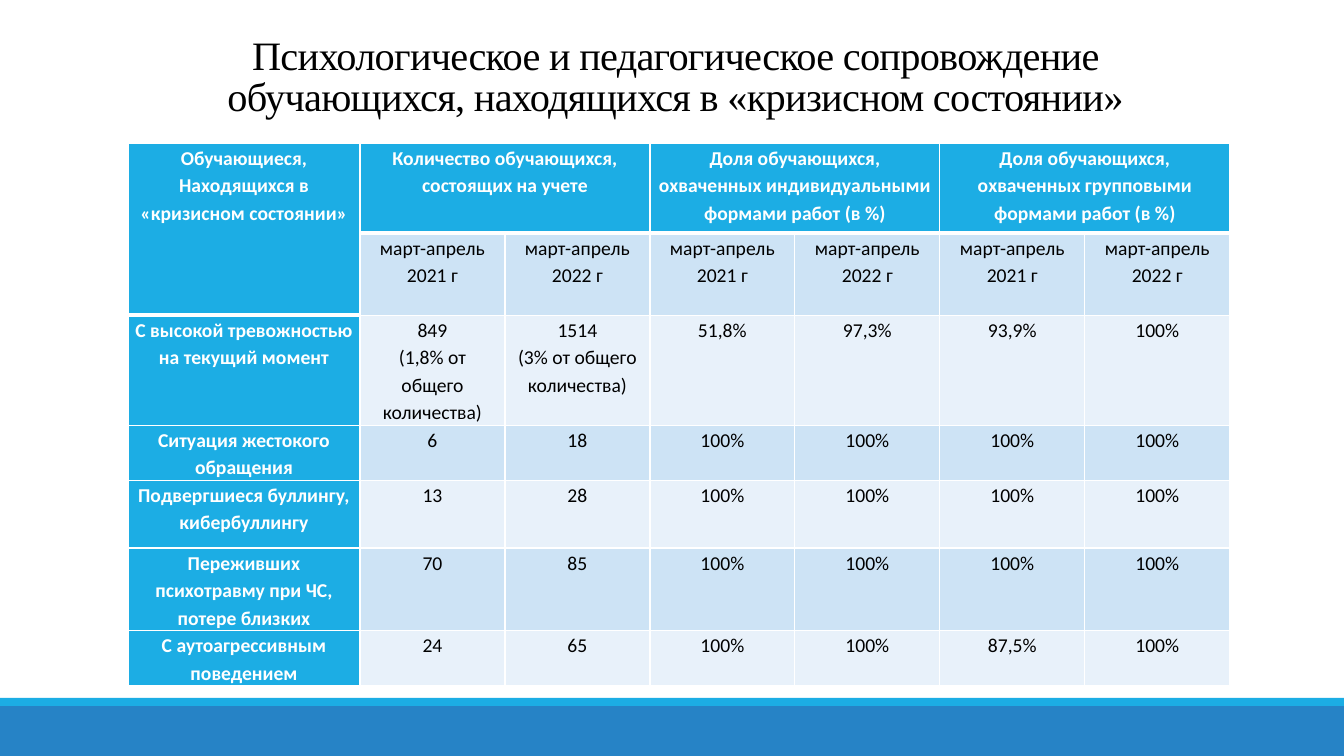
from dataclasses import dataclass

from lxml.etree import SubElement
from pptx import Presentation
from pptx.dml.color import RGBColor
from pptx.enum.shapes import MSO_SHAPE
from pptx.enum.text import MSO_ANCHOR, MSO_AUTO_SIZE, PP_ALIGN
from pptx.oxml.ns import qn
from pptx.util import Emu, Pt

TITLE = "Психологическое и педагогическое сопровождение обучающихся, находящихся в «кризисном состоянии»"
CORNER = "Обучающиеся,\nНаходящихся в «кризисном состоянии»"
MEASURES = [
    "Количество обучающихся,\nсостоящих на учете",
    "Доля обучающихся, охваченных индивидуальными формами работ (в %)",
    "Доля обучающихся, охваченных групповыми формами работ (в %)",
]
PERIODS = ["март-апрель 2021 г", "март-апрель 2022 г"]
GROUPS = [
    ("С высокой тревожностью на текущий момент", "849\n(1,8% от общего количества)",
     "1514\n(3% от общего количества)", "51,8%", "97,3%", "93,9%", "100%"),
    ("Ситуация жестокого обращения", "6", "18", "100%", "100%", "100%", "100%"),
    ("Подвергшиеся буллингу, кибербуллингу", "13", "28", "100%", "100%", "100%", "100%"),
    ("Переживших психотравму при ЧС, потере близких", "70", "85", "100%", "100%", "100%", "100%"),
    ("С аутоагрессивным поведением", "24", "65", "100%", "100%", "87,5%", "100%"),
]

TITLE_BOX = (121, 31, 1109, 95)
TABLE_LEFT, TABLE_TOP = 128, 143
GROUP_WIDTH, VALUE_WIDTH = 232, 145
ROW_HEIGHTS = [90, 82, 110, 54, 68, 82, 54]
PAGE_WIDTH, PAGE_HEIGHT = 1344, 756
FOOTER_TOP, STRIPE_HEIGHT = 706, 8


@dataclass(frozen=True)
class Theme:
    accent: str = "1CADE4"
    footer: str = "2683C6"
    bands: tuple = ("E8F1FA", "CDE3F5")
    white: str = "FFFFFF"
    black: str = "000000"
    title_font: str = "Times New Roman"
    body_font: str = "Calibri"
    title_size: float = 28.8
    body_size: int = 14
    thin: int = 1
    thick: int = 3


THEME = Theme()


def px(length):
    return Emu(round(length * 914400 / 100.8))


def apply(target, formats):
    for name, value in formats.items():
        setattr(target, name, value)


def paint(fill, color):
    fill.solid()
    fill.fore_color.rgb = RGBColor.from_string(color)


def write(frame, text, spacing, color, **font):
    frame.text = text
    for para in frame.paragraphs:
        apply(para, {"alignment": PP_ALIGN.CENTER, "line_spacing": spacing})
        for span in para.runs:
            apply(span.font, font)
            span.font.color.rgb = RGBColor.from_string(color)


def add_band(page, top, height, color):
    band = page.shapes.add_shape(MSO_SHAPE.RECTANGLE, 0, px(top), px(PAGE_WIDTH), px(height))
    paint(band.fill, color)
    band.line.fill.background()
    band.shadow.inherit = False


def draw_borders(cell, row, column):
    header_end = 1 if column == 0 else 0
    bottom = THEME.thick if row <= header_end else THEME.thin
    top = THEME.thick if row == header_end + 1 else THEME.thin
    properties = cell._tc.get_or_add_tcPr()
    for side, width in (("L", THEME.thin), ("R", THEME.thin), ("T", top), ("B", bottom)):
        line = SubElement(properties, qn(f"a:ln{side}"), w=str(Pt(width)))
        fill = SubElement(line, qn("a:solidFill"))
        SubElement(fill, qn("a:srgbClr"), val=THEME.white)


def add_title(page):
    title = page.shapes.title
    apply(title, dict(zip(("left", "top", "width", "height"), map(px, TITLE_BOX))))
    frame = title.text_frame
    write(frame, TITLE, 0.85, THEME.black, name=THEME.title_font, size=Pt(THEME.title_size), bold=False)
    apply(frame, {"vertical_anchor": MSO_ANCHOR.MIDDLE, "word_wrap": True, "auto_size": MSO_AUTO_SIZE.NONE})
    frame.paragraphs[0].runs[0].font._element.set("spc", "-50")


def add_group_table(page):
    measure_row = [CORNER]
    for measure in MEASURES:
        measure_row += [measure, ""]
    rows = [measure_row, ["", *PERIODS * len(MEASURES)], *GROUPS]
    widths = [GROUP_WIDTH] + [VALUE_WIDTH] * (len(measure_row) - 1)
    table = page.shapes.add_table(
        len(rows), len(widths), px(TABLE_LEFT), px(TABLE_TOP), px(sum(widths)), px(sum(ROW_HEIGHTS))
    ).table
    for column, width in zip(table.columns, widths):
        column.width = px(width)
    for row, height in zip(table.rows, ROW_HEIGHTS):
        row.height = px(height)

    for row, texts in enumerate(rows):
        for column, text in enumerate(texts):
            cell = table.cell(row, column)
            heading = row == 0 or column == 0
            apply(cell, {"margin_left": px(7), "margin_right": px(7), "margin_top": 0, "margin_bottom": 0})
            draw_borders(cell, row, column)
            paint(cell.fill, THEME.accent if heading else THEME.bands[row % 2])
            write(cell.text_frame, text, 1.15, THEME.white if heading else THEME.black,
                  name=THEME.body_font, size=Pt(THEME.body_size), bold=heading)

    table.cell(0, 0).merge(table.cell(1, 0))
    for column in range(1, len(widths), 2):
        table.cell(0, column).merge(table.cell(0, column + 1))


def main():
    deck = Presentation()
    apply(deck, {"slide_width": px(PAGE_WIDTH), "slide_height": px(PAGE_HEIGHT)})
    page = deck.slides.add_slide(deck.slide_layouts[5])
    add_band(page, FOOTER_TOP, PAGE_HEIGHT - FOOTER_TOP, THEME.footer)
    add_band(page, FOOTER_TOP - STRIPE_HEIGHT, STRIPE_HEIGHT, THEME.accent)
    add_title(page)
    add_group_table(page)
    deck.save("out.pptx")


if __name__ == "__main__":
    main()
